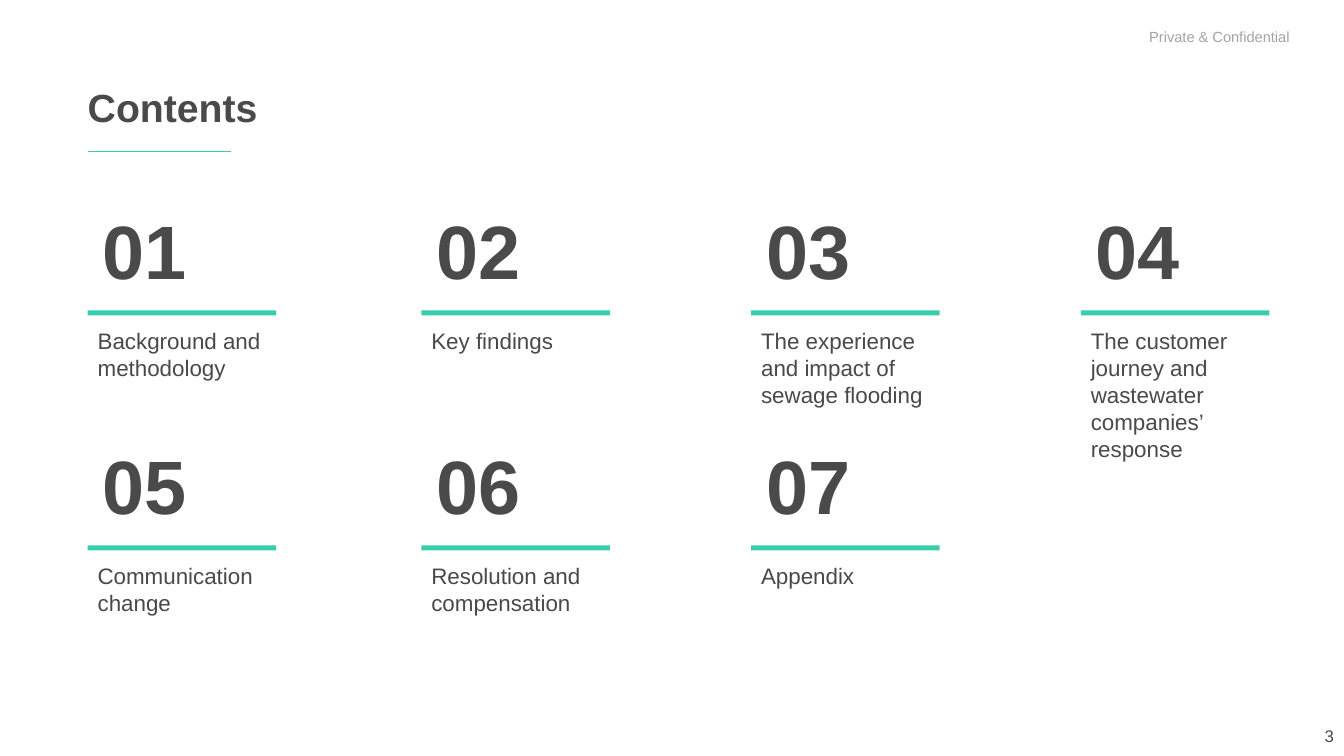
from dataclasses import dataclass

from lxml import etree
from pptx import Presentation
from pptx.dml.color import RGBColor
from pptx.enum.shapes import MSO_CONNECTOR, MSO_SHAPE
from pptx.enum.text import MSO_ANCHOR, PP_ALIGN
from pptx.oxml.ns import qn
from pptx.util import Inches, Pt

RECTANGLE = MSO_SHAPE.RECTANGLE
STRAIGHT = MSO_CONNECTOR.STRAIGHT
TOP, MIDDLE = MSO_ANCHOR.TOP, MSO_ANCHOR.MIDDLE
LEFT, RIGHT = PP_ALIGN.LEFT, PP_ALIGN.RIGHT

FONT = "Arial"
DARK, LABEL, GREY = "4A4A4A", "494949", "A4A4A4"
GREEN, WHITE = "37CEAC", "FFFFFF"

COLUMNS = (0.87, 4.18, 7.45, 10.72)
FIRST_ROW, ROW_STEP = 2.08, 2.33


@dataclass
class Section:
    title: str
    width: float
    height: float


@dataclass
class Style:
    size: float
    color: str
    bold: bool = False
    spacing: float = 1.0
    align: PP_ALIGN = LEFT
    anchor: MSO_ANCHOR = TOP


HEADING = Style(28, DARK, bold=True, spacing=0.9)
NUMBER = Style(54, DARK, bold=True, spacing=0.9)
TITLE = Style(16, LABEL)
NOTICE = Style(10.5, GREY, anchor=MIDDLE)
PAGE_NUMBER = Style(12, DARK, align=RIGHT, anchor=MIDDLE)

SECTIONS = (
    Section("Background and methodology", 2.28, 0.64),
    Section("Key findings", 2.08, 0.37),
    Section("The experience and impact of sewage flooding", 2.15, 0.91),
    Section("The customer journey and wastewater companies’ response", 2.15, 1.45),
    Section("Communication change", 2.04, 0.64),
    Section("Resolution and compensation", 1.87, 0.64),
    Section("Appendix", 1.87, 0.37),
)


def rgb(value: str) -> RGBColor:
    return RGBColor.from_string(value)


def write(shape, text: str, style: Style) -> None:
    frame = shape.text_frame
    frame.word_wrap = True
    frame.vertical_anchor = style.anchor
    para = frame.paragraphs[0]
    para.alignment = style.align
    para.line_spacing = style.spacing
    span = para.add_run()
    span.text = text
    span.font.name = FONT
    span.font.size = Pt(style.size)
    span.font.bold = style.bold
    span.font.color.rgb = rgb(style.color)


def add_text(page, left: float, top: float, width: float, height: float,
             text: str, style: Style):
    box = page.shapes.add_textbox(Inches(left), Inches(top), Inches(width), Inches(height))
    write(box, text, style)
    return box


def add_block(page, left: float, top: float, width: float, height: float, color: str):
    block = page.shapes.add_shape(
        RECTANGLE, Inches(left), Inches(top), Inches(width), Inches(height))
    block.shadow.inherit = False
    block.fill.solid()
    block.fill.fore_color.rgb = rgb(color)
    block.line.fill.background()
    return block


def add_rule(page, left: float, right: float, top: float) -> None:
    rule = page.shapes.add_connector(
        STRAIGHT, Inches(left), Inches(top), Inches(right), Inches(top))
    rule.line.width = Pt(1)
    rule.line.fill.solid()
    rule.line.fill.fore_color.rgb = rgb(GREEN)
    etree.SubElement(rule._element.spPr, qn("a:effectLst"))
    # Drop the theme style so that only the line's own settings count
    rule._element.remove(rule._element.find(qn("p:style")))


def add_section(page, index: int, section: Section) -> None:
    row, column = divmod(index, len(COLUMNS))
    left, top = COLUMNS[column], FIRST_ROW + row * ROW_STEP
    add_text(page, left + 0.05, top, 1.21, 1, f"{index + 1:02d}", NUMBER)
    add_block(page, left, top + 1, 1.87, 0.05, GREEN)
    add_text(page, left, top + 1.12, section.width, section.height, section.title, TITLE)


def main() -> None:
    deck = Presentation()
    deck.slide_width, deck.slide_height = Inches(13.33), Inches(7.5)
    page = deck.slides.add_slide(deck.slide_layouts[6])

    # Page furniture
    add_text(page, 10.33, 7.1, 3, 0.4, "3", PAGE_NUMBER)
    add_rule(page, 0.87, 2.29, 1.5)
    notice = add_block(page, 11.3, 0.19, 1.63, 0.35, WHITE)
    write(notice, "Private & Confidential", NOTICE)

    # Heading
    heading = add_text(page, 0.87, 0.83, 11.79, 0.59, "Contents", HEADING)
    heading.text_frame.margin_left = 0

    # Numbered sections
    for index, section in enumerate(SECTIONS):
        add_section(page, index, section)

    deck.save("out.pptx")


if __name__ == "__main__":
    main()
